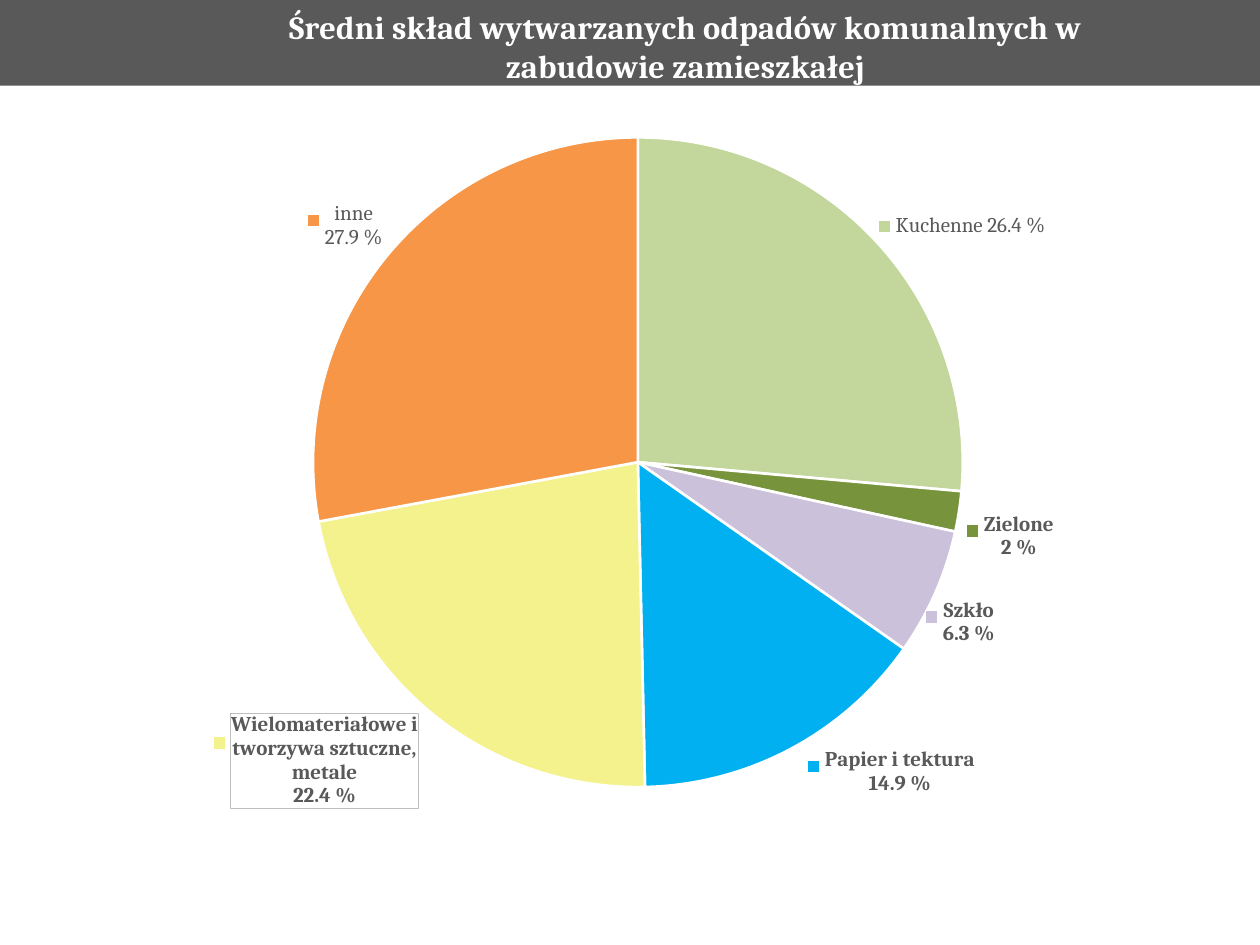
from dataclasses import dataclass
from lxml import etree
from pptx import Presentation
from pptx.chart.data import CategoryChartData
from pptx.dml.color import RGBColor
from pptx.enum.chart import XL_CHART_TYPE, XL_LABEL_POSITION
from pptx.enum.shapes import MSO_SHAPE
from pptx.oxml import parse_xml
from pptx.oxml.ns import nsdecls, qn
from pptx.util import Cm, Pt

PIE = XL_CHART_TYPE.PIE
OUTSIDE = XL_LABEL_POSITION.OUTSIDE_END
RECT = MSO_SHAPE.RECTANGLE


@dataclass(frozen=True)
class Theme:
    font: str = "Cambria"
    dark: str = "595959"
    white: str = "FFFFFF"
    frame: str = "BFBFBF"
    title: float = 18.45
    label: float = 12
    base: float = 10
    edge: float = 1.5
    thin: float = 0.5


@dataclass(frozen=True)
class Part:
    name: str
    value: float
    color: str
    lines: tuple
    bold: bool = True
    framed: bool = False
    shift: tuple = ()  # label offset in cm


PARTS = [
    Part("Kuchenne", 26.4, "C3D69B", ("Kuchenne 26.4 %",), bold=False,
         shift=(-0.1, 0)),
    Part("Zielone", 2, "77933C", ("Zielone", "2 %")),
    Part("Szkło", 6.3, "CCC1DA", ("Szkło", "6.3 %"), shift=(-0.34, 0.06)),
    Part("Papier i tektura", 14.9, "00B0F0", ("Papier i tektura", "14.9 %"),
         shift=(0.26, -0.14)),
    Part("Wielomateriałowe i tworzywa sztuczne, metale", 22.4, "F4F28C",
         ("Wielomateriałowe i tworzywa sztuczne, metale", "22.4 %"),
         framed=True, shift=(-0.2, -0.14)),
    Part("inne", 27.9, "F79646", ("inne", "27.9 %"), bold=False),
]
TITLE = "Średni skład wytwarzanych odpadów komunalnych w zabudowie zamieszkałej"


class Deck:
    def __init__(self, slide, theme):
        self.slide = slide
        self.theme = theme

    def style(self, font, size, color, bold=False):
        font.name = self.theme.font
        font.size = Pt(size)
        font.bold = bold
        font.color.rgb = RGBColor.from_string(color)

    def band(self, left, top, width, height):
        shape = self.slide.shapes.add_shape(
            RECT, Cm(left), Cm(top), Cm(width), Cm(height))
        shape.shadow.inherit = False
        shape.fill.solid()
        shape.fill.fore_color.rgb = RGBColor.from_string(self.theme.dark)
        shape.line.fill.background()

    def place(self, parent, index, area, box, modes):
        """Place a chart part; area and box are in cm, stored as shares."""
        for old in parent.findall(qn("c:layout")):
            parent.remove(old)
        layout = etree.Element(qn("c:layout"))
        manual = etree.SubElement(layout, qn("c:manualLayout"))
        shares = {name: size / full
                  for name, size, full in zip("xywh", box, area * 2)}
        for name, value in {**modes, **shares}.items():
            etree.SubElement(manual, qn("c:" + name)).set("val", str(value))
        parent.insert(index, layout)

    def pie(self, left, top, width, height, title, parts):
        theme = self.theme
        size = (width, height)
        edges = {"xMode": "edge", "yMode": "edge"}
        data = CategoryChartData()
        data.categories = [part.name for part in parts]
        data.add_series("Series 1", [part.value for part in parts])
        chart = self.slide.shapes.add_chart(
            PIE, Cm(left), Cm(top), Cm(width), Cm(height), data).chart
        self.style(chart.font, theme.base, "000000")
        chart.has_legend = False

        # Title
        chart.has_title = True
        frame = chart.chart_title.text_frame
        frame.text = title
        self.style(frame.paragraphs[0].runs[0].font,
                   theme.title, theme.white, True)
        self.place(chart.chart_title.element, 1, size, (3.6, 0), edges)

        # Slices and their labels
        plot = chart.plots[0]
        plot.vary_by_categories = True
        series = plot.series[0]
        labels = series.data_labels
        labels.show_value = True
        labels.show_category_name = True
        labels.show_percentage = False
        labels.position = OUTSIDE
        self.style(labels.font, theme.label, theme.dark, True)
        for index, part in enumerate(parts):
            point = series.points[index]
            point.format.fill.solid()
            point.format.fill.fore_color.rgb = RGBColor.from_string(part.color)
            point.format.line.color.rgb = RGBColor.from_string(theme.white)
            point.format.line.width = Pt(theme.edge)
            self.label(point.data_label, part)

        # Legend keys, label shifts and frame, plot place
        root = chart.element
        for key in root.iter(qn("c:showLegendKey")):
            key.set("val", "1")
        for lead in root.iter(qn("c:showLeaderLines")):
            lead.set("val", "0")
        for label, part in zip(root.iter(qn("c:dLbl")), parts):
            if part.framed:
                self.frame(label)
            if part.shift:
                self.place(label, 1, size, part.shift, {})
        area = next(root.iter(qn("c:plotArea")))
        self.place(area, 0, size, (4.2, 2.77, 13.1, 13.1),
                   {"layoutTarget": "inner", **edges})

    def label(self, label, part):
        frame = label.text_frame
        frame.text = "\n".join(part.lines)
        for para in frame.paragraphs:
            for run in para.runs:
                self.style(run.font, self.theme.label, self.theme.dark,
                           part.bold)
        label.position = OUTSIDE

    def frame(self, label):
        theme = self.theme
        label.find(qn("c:tx")).addnext(parse_xml(
            f'<c:spPr {nsdecls("c", "a")}>'
            f'<a:solidFill><a:srgbClr val="{theme.white}"/></a:solidFill>'
            f'<a:ln w="{Pt(theme.thin)}"><a:solidFill>'
            f'<a:srgbClr val="{theme.frame}"/>'
            '</a:solidFill></a:ln></c:spPr>'))


def main():
    prs = Presentation()
    prs.slide_width, prs.slide_height = Cm(25.4), Cm(19.05)
    deck = Deck(prs.slides.add_slide(prs.slide_layouts[6]), Theme())
    deck.band(0, 0, 25.4, 1.73)
    deck.pie(2.11, 0, 21.21, 17.53, TITLE, PARTS)
    prs.save("out.pptx")


if __name__ == "__main__":
    main()
